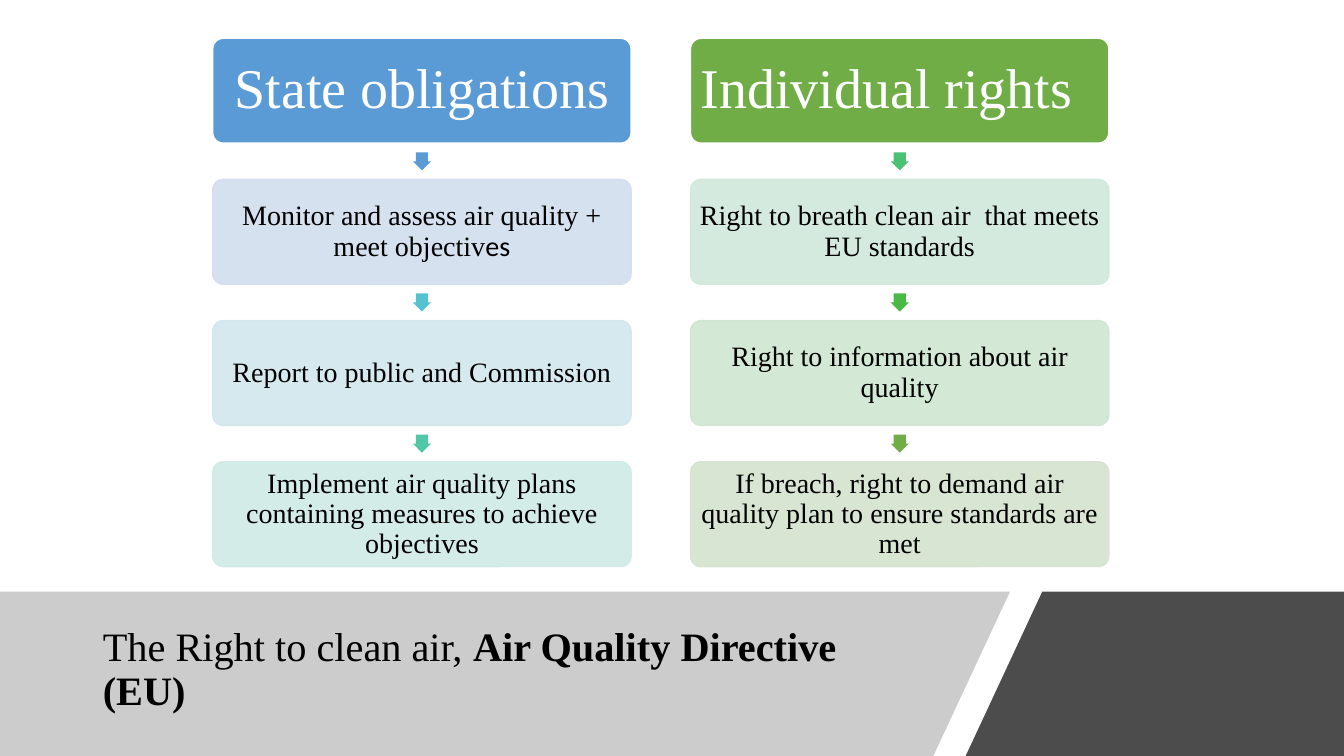
from lxml.etree import SubElement
from pptx import Presentation
from pptx.dml.color import RGBColor
from pptx.enum.shapes import MSO_SHAPE
from pptx.enum.text import MSO_ANCHOR, MSO_AUTO_SIZE, PP_ALIGN
from pptx.oxml.ns import qn
from pptx.util import Inches, Pt

SERIF, SANS = "Times New Roman", "Calibri"
CARD_LEFT, CARD_TOP = 15.83, 5.07
CARD_WIDTH, CARD_HEIGHT = 31.13, 13.87
COLUMN_STEP, ROW_STEP = 35.55, 18.67
ARROW_WIDTH, ARROW_HEIGHT = 1.35, 2.4
BAND_TOP = 78.27

COLUMNS = [
    {
        "heading": "State obligations", "fill": "5B9BD5", "margins": (0.09, 0.09),
        "steps": [
            ("5B9BD5", "D2DEEF", [("Monitor and assess air quality + meet objectiv", SERIF), ("es", SANS)]),
            ("55C3CF", "D1E7ED", [("Report to public and Commission", SERIF)]),
            ("50C8A7", "D0EBE6", [("Implement air quality plans containing measures to achieve objectives", SERIF)]),
        ],
    },
    {
        "heading": "Individual rights", "fill": "70AD47", "margins": (0.05, 0.31),
        "steps": [
            ("4BC174", "D0E8DB", [("Right to breath clean air  that meets EU standards", SERIF)]),
            ("4ABA46", "CFE6D1", [("Right to information about air quality", SERIF)]),
            ("70AD47", "D5E3CF", [("If breach, right to demand air quality plan to ensure standards are met", SERIF)]),
        ],
    },
]


def colour(value):
    """Turn a hex string into a colour."""
    return RGBColor.from_string(value)


class Slide:
    """Draws styled elements, with lengths in percent of the slide's size."""

    def __init__(self, deck):
        """Add a title-only page to the deck."""
        self.deck = deck
        self.page = deck.slides.add_slide(deck.slide_layouts[5])

    def across(self, share):
        """Convert a percentage of the width."""
        return round(self.deck.slide_width * share / 100)

    def down(self, share):
        """Convert a percentage of the height."""
        return round(self.deck.slide_height * share / 100)

    def place(self, left, top, width, height):
        """Convert a whole frame."""
        return self.across(left), self.down(top), self.across(width), self.down(height)

    def paint(self, shape, fill, line=None, opacity=100):
        """Set the fill, outline and opacity of a shape."""
        shape.shadow.inherit = False
        shape.fill.solid()
        shape.fill.fore_color.rgb = colour(fill)
        if line:
            shape.line.color.rgb = colour(line)
            shape.line.width = Pt(1)
        else:
            shape.line.fill.background()
        if opacity < 100:
            for tint in shape._element.spPr.iter(qn("a:srgbClr")):
                SubElement(tint, qn("a:alpha")).set("val", str(opacity * 1000))

    def add_span(self, para, text, font, size, ink, bold=False):
        """Add one run to a paragraph."""
        span = para.add_run()
        span.text = text
        span.font.name, span.font.size, span.font.bold = font, Pt(size), bold
        span.font.color.rgb = colour(ink)

    def band(self, points, fill, opacity):
        """Draw a slanted footer band."""
        corners = [(self.across(x), self.down(y)) for x, y in points]
        builder = self.page.shapes.build_freeform(*corners[0], scale=1)
        builder.add_line_segments(corners[1:], close=True)
        self.paint(builder.convert_to_shape(), fill, opacity=opacity)

    def title(self, spans):
        """Fill the title placeholder and lift it above the bands."""
        box = self.page.shapes.title
        box.left, box.top, box.width, box.height = self.place(6.9, 80.67, 63.3, 16)
        frame = box.text_frame
        frame.auto_size = MSO_AUTO_SIZE.NONE
        frame.word_wrap = True
        frame.vertical_anchor = MSO_ANCHOR.MIDDLE
        frame.margin_right = Inches(0.4)
        para = frame.paragraphs[0]
        para.alignment, para.line_spacing = PP_ALIGN.LEFT, 0.9
        for text, bold in spans:
            self.add_span(para, text, SERIF, 28.8, "000000", bold)
        self.page.shapes._spTree.append(box._element)

    def card(self, column, row, spans, fill, line, size, ink, margins, opacity=100):
        """Draw a rounded card with centred text in a grid cell."""
        frame = self.place(CARD_LEFT + column * COLUMN_STEP, CARD_TOP + row * ROW_STEP, CARD_WIDTH, CARD_HEIGHT)
        box = self.page.shapes.add_shape(MSO_SHAPE.ROUNDED_RECTANGLE, *frame)
        box.adjustments[0] = 0.1
        self.paint(box, fill, line, opacity)
        words = box.text_frame
        words.word_wrap = True
        words.vertical_anchor = MSO_ANCHOR.MIDDLE
        words.margin_left, words.margin_right = (Inches(side) for side in margins)
        words.margin_top = words.margin_bottom = Inches(0.06)
        para = words.paragraphs[0]
        para.alignment, para.line_spacing = PP_ALIGN.CENTER, 0.9
        for text, font in spans:
            self.add_span(para, text, font, size, ink)

    def arrow(self, column, row, fill):
        """Draw the arrow that leads down to a grid cell."""
        left = CARD_LEFT + column * COLUMN_STEP + (CARD_WIDTH - ARROW_WIDTH) / 2
        gap = ROW_STEP - CARD_HEIGHT
        top = CARD_TOP + row * ROW_STEP - (gap + ARROW_HEIGHT) / 2
        frame = self.place(left, top, ARROW_WIDTH, ARROW_HEIGHT)
        arrow = self.page.shapes.add_shape(MSO_SHAPE.DOWN_ARROW, *frame)
        arrow.adjustments[0], arrow.adjustments[1] = 0.67, 0.5
        self.paint(arrow, fill)


def main():
    """Build and save the deck."""
    deck = Presentation()
    deck.slide_width, deck.slide_height = Inches(13.33), Inches(7.5)
    slide = Slide(deck)
    slide.band([(0, BAND_TOP), (75.15, BAND_TOP), (69.45, 100), (0, 100)], "808080", 40)
    slide.title([("The Right to clean air, ", False), ("Air Quality Directive (EU)", True)])
    slide.band([(77.55, BAND_TOP), (100, BAND_TOP), (100, 100), (71.85, 100)], "000000", 70)
    for column, group in enumerate(COLUMNS):
        heading = [(group["heading"], SERIF)]
        slide.card(column, 0, heading, group["fill"], "FFFFFF", 40, "FFFFFF", group["margins"])
        for row, (arrow_fill, card_fill, spans) in enumerate(group["steps"], 1):
            slide.arrow(column, row, arrow_fill)
            slide.card(column, row, spans, card_fill, card_fill, 20, "000000", (0.06, 0.06), 90)
    deck.save("out.pptx")


if __name__ == "__main__":
    main()
